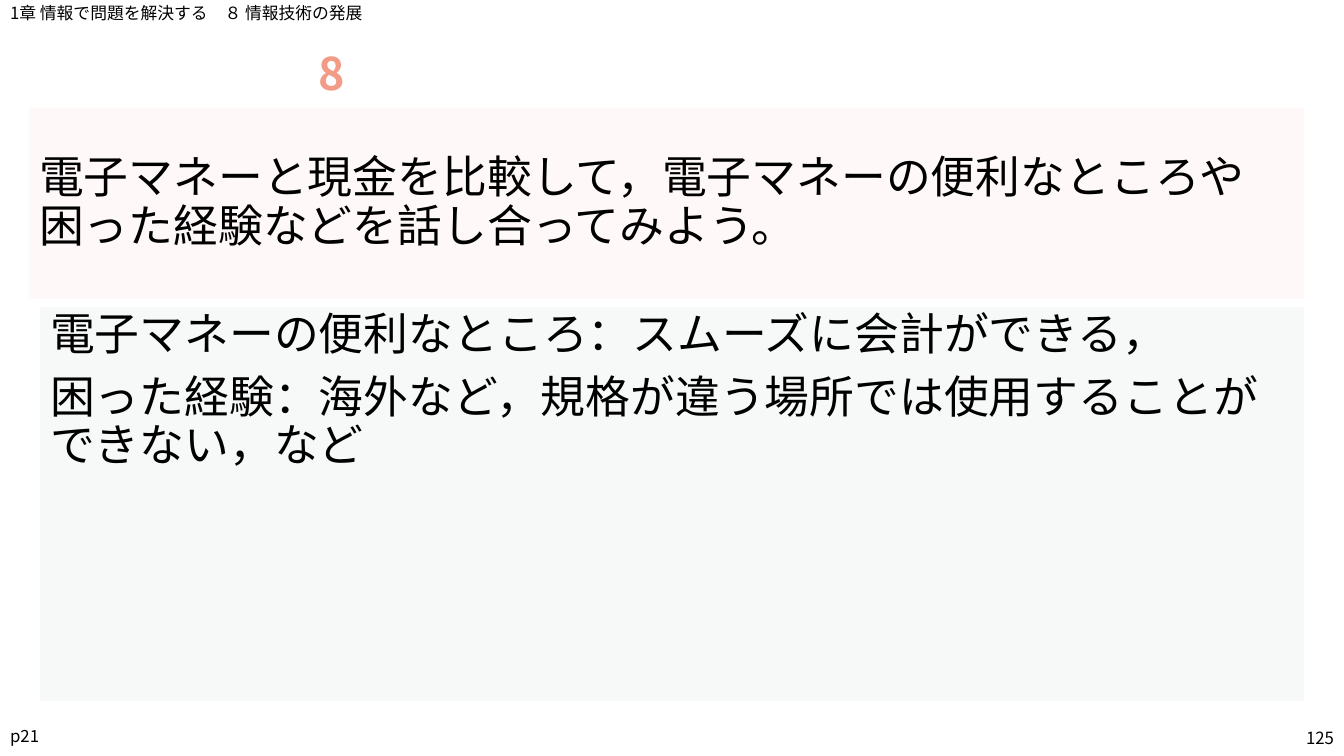
import pptx
import pptx.dml.color
import pptx.enum.text
import pptx.oxml.ns
import pptx.util
from lxml import etree

EMU_PER_PX = 914400 / 100.8
FONT = "Noto Sans CJK JP"
ANCHOR = pptx.enum.text.MSO_ANCHOR
ALIGN = pptx.enum.text.PP_ALIGN


def px(n):
    return pptx.util.Emu(round(n * EMU_PER_PX))


def rgb(value):
    return pptx.dml.color.RGBColor.from_string(value)


def assign(target, values):
    for name, value in values.items():
        setattr(target, name, value)


class Deck:
    def __init__(self, width, height):
        self.prs = pptx.Presentation()
        assign(self.prs, {"slide_width": px(width), "slide_height": px(height)})
        self.slide = None

    def add_slide(self, layout):
        self.slide = self.prs.slides.add_slide(self.prs.slide_layouts[layout])

    def placeholder(self, idx, box, lines, fill=None, **style):
        sp = next(p for p in self.slide.placeholders
                  if p.placeholder_format.idx == idx)
        assign(sp, dict(zip(("left", "top", "width", "height"), map(px, box))))
        if fill:
            sp.fill.solid()
            sp.fill.fore_color.rgb = rgb(fill)
        self.fill_text(sp.text_frame, lines, **style)

    def textbox(self, box, lines, **style):
        sp = self.slide.shapes.add_textbox(*map(px, box))
        self.fill_text(sp.text_frame, lines, **style)

    def fill_text(self, tf, lines, size=32, color="000000", bold=False,
                  anchor=ANCHOR.TOP, align=ALIGN.LEFT, spacing=0.9):
        assign(tf, {"word_wrap": True, "vertical_anchor": anchor,
                    "auto_size": pptx.enum.text.MSO_AUTO_SIZE.NONE})
        for i, line in enumerate(lines):
            p = tf.add_paragraph() if i else tf.paragraphs[0]
            pPr = p._p.get_or_add_pPr()
            pPr.set("marL", "0")
            pPr.set("indent", "0")
            etree.SubElement(pPr, pptx.oxml.ns.qn("a:buNone"))
            assign(p, {"alignment": align, "line_spacing": spacing,
                       "space_before": pptx.util.Pt(10 if i else 0)})
            r = p.add_run()
            r.text = line
            assign(r.font, {"name": FONT, "size": pptx.util.Pt(size), "bold": bold})
            r.font.color.rgb = rgb(color)
            ea = etree.SubElement(r._r.get_or_add_rPr(), pptx.oxml.ns.qn("a:ea"))
            ea.set("typeface", FONT)


def main():
    deck = Deck(1344, 756)
    deck.add_slide(4)
    deck.placeholder(2, (40, 307, 1264, 394),
                     ["電子マネーの便利なところ：スムーズに会計ができる，",
                      "困った経験：海外など，規格が違う場所では使用することができない，など"],
                     fill="F7F8F8")
    deck.textbox((1041, 721, 303, 33), ["125"], size=12,
                 anchor=ANCHOR.MIDDLE, align=ALIGN.RIGHT, spacing=1.0)
    deck.placeholder(1, (0, 0, 967, 28),
                     ["1章 情報で問題を解決する　８ 情報技術の発展"], size=12)
    deck.placeholder(3, (0, 721, 444, 33), ["p21"], size=12, anchor=ANCHOR.MIDDLE)
    deck.placeholder(4, (29, 108, 1275, 191),
                     ["電子マネーと現金を比較して，電子マネーの便利なところや"
                      "困った経験などを話し合ってみよう。"],
                     fill="FEF8F8", anchor=ANCHOR.MIDDLE)
    deck.placeholder(0, (308, 48, 75, 56), ["8"], color="F29B87", bold=True,
                     anchor=ANCHOR.MIDDLE)
    deck.prs.save("out.pptx")


if __name__ == "__main__":
    main()
